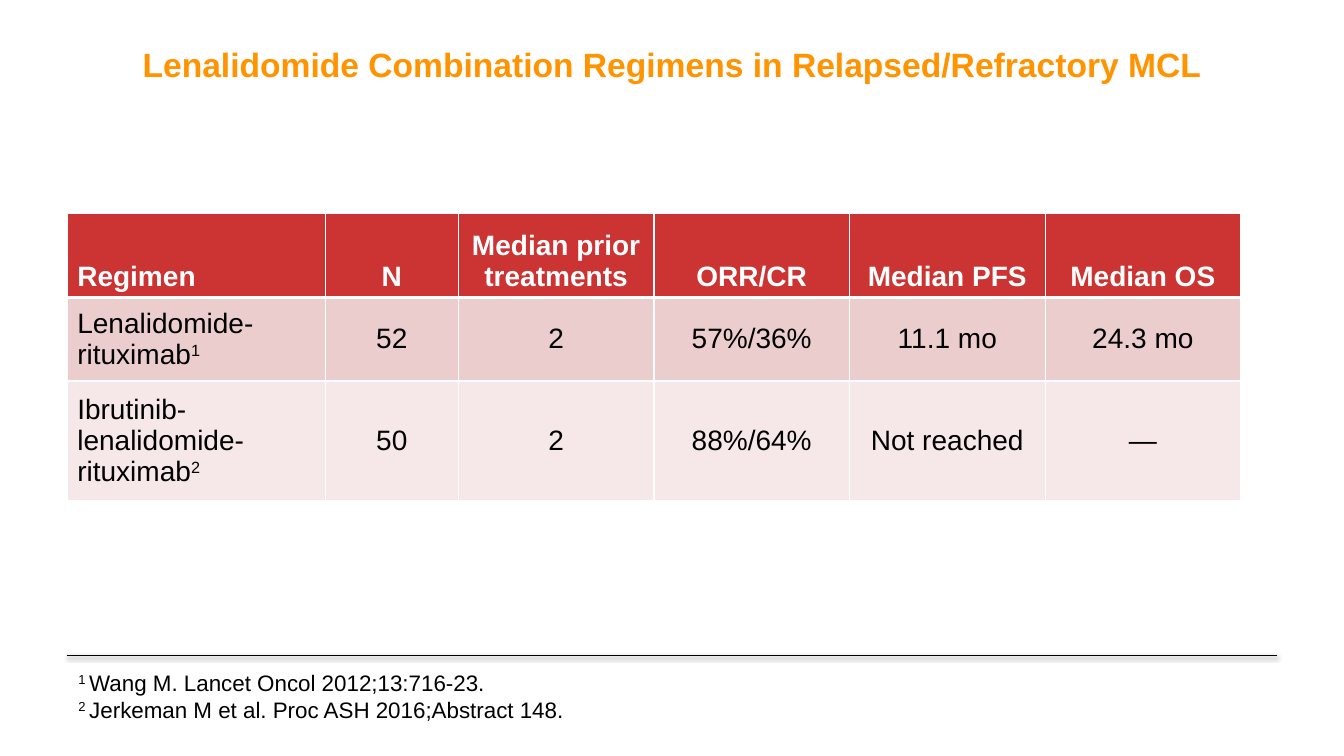
from lxml import etree
from pptx import Presentation
from pptx.dml.color import RGBColor
from pptx.enum.shapes import MSO_CONNECTOR
from pptx.enum.text import MSO_ANCHOR, MSO_AUTO_SIZE, PP_ALIGN
from pptx.oxml import parse_xml
from pptx.util import Inches, Pt

LEFT, CENTER = PP_ALIGN.LEFT, PP_ALIGN.CENTER
TOP, MIDDLE, BOTTOM = MSO_ANCHOR.TOP, MSO_ANCHOR.MIDDLE, MSO_ANCHOR.BOTTOM
STRAIGHT = MSO_CONNECTOR.STRAIGHT
NS = "http://schemas.openxmlformats.org/drawingml/2006/main"


def rgb(value):
    return RGBColor.from_string(value)


def write(paragraph, pieces, size, color, bold=False, align=LEFT):
    paragraph.alignment = align
    for text, raised in pieces:
        run = paragraph.add_run()
        run.text = text
        for key, value in {"name": "Arial", "size": Pt(size), "bold": bold}.items():
            setattr(run.font, key, value)
        run.font.color.rgb = rgb(color)
        if raised:
            run._r.get_or_add_rPr().set("baseline", "30000")


deck = Presentation()
deck.slide_width, deck.slide_height = Inches(13.33), Inches(7.5)
slide = deck.slides.add_slide(deck.slide_layouts[5])
margin = int(deck.slide_width * 0.05)
content_width = deck.slide_width - 2 * margin

rule_y = Inches(6.5)
rule = slide.shapes.add_connector(STRAIGHT, margin, rule_y, margin + content_width, rule_y)
rule.line.color.rgb = rgb("000000")
rule.line.width = Pt(0.5)
rule._element.spPr.append(parse_xml(
    f'<a:effectLst xmlns:a="{NS}"><a:outerShdw blurRad="{Pt(3.1)}" dist="{Pt(1.6)}" '
    'dir="5400000" rotWithShape="0"><a:srgbClr val="000000"><a:alpha val="38000"/>'
    '</a:srgbClr></a:outerShdw></a:effectLst>'))

heading = slide.shapes.title
place = {"left": margin, "top": Inches(0.44), "width": content_width, "height": Inches(0.81)}
for key, value in place.items():
    setattr(heading, key, value)
heading_frame = heading.text_frame
frame_format = {"margin_left": 0, "margin_right": 0, "margin_top": 0, "margin_bottom": 0,
                "vertical_anchor": TOP, "word_wrap": True, "auto_size": MSO_AUTO_SIZE.NONE}
for key, value in frame_format.items():
    setattr(heading_frame, key, value)
write(heading_frame.paragraphs[0],
      [("Lenalidomide Combination Regimens in Relapsed/Refractory MCL", False)],
      24, "FF9300", True, CENTER)

regimens = [
    ["Regimen", "N", "Median prior treatments", "ORR/CR", "Median PFS", "Median OS"],
    ["Lenalidomide-rituximab", "52", "2", "57%/36%", "11.1 mo", "24.3 mo"],
    ["Ibrutinib-lenalidomide-rituximab", "50", "2", "88%/64%", "Not reached", "—"],
]
column_widths = [2.56, 1.32] + [1.94] * 4
row_heights = [0.83, 0.83, 1.19]
row_fills = ["CC3333", "ECCDCD", "F6E8E8"]
table = slide.shapes.add_table(
    len(row_heights), len(column_widths), margin, Inches(2.12),
    Inches(sum(column_widths)), Inches(sum(row_heights))).table
for column, width in zip(table.columns, column_widths):
    column.width = Inches(width)
for row, height in zip(table.rows, row_heights):
    row.height = Inches(height)

for r, values in enumerate(regimens):
    header = r == 0
    for c, value in enumerate(values):
        cell = table.cell(r, c)
        cell.vertical_anchor = BOTTOM if header else MIDDLE
        pieces = [(value, False)]
        if c == 0 and not header:
            pieces.append((str(r), True))
        write(cell.text_frame.paragraphs[0], pieces, 20,
              "FFFFFF" if header else "000000", header, CENTER if c else LEFT)
        properties = cell._tc.get_or_add_tcPr()
        border_widths = {"lnL": 1, "lnR": 1, "lnT": 3 if r == 1 else 1, "lnB": 3 if header else 1}
        for side, points in border_widths.items():
            border = etree.SubElement(properties, f"{{{NS}}}{side}", w=str(Pt(points)))
            paint = etree.SubElement(border, f"{{{NS}}}solidFill")
            etree.SubElement(paint, f"{{{NS}}}srgbClr", val="FFFFFF")
        cell.fill.solid()
        cell.fill.fore_color.rgb = rgb(row_fills[r])

references = ["Wang M. Lancet Oncol 2012;13:716-23.", "Jerkeman M et al. Proc ASH 2016;Abstract 148."]
footnotes = slide.shapes.add_textbox(Inches(0.68), Inches(6.59), Inches(5.17), Inches(0.64)).text_frame
footnotes.word_wrap = False
footnotes.auto_size = MSO_AUTO_SIZE.SHAPE_TO_FIT_TEXT
for number, reference in enumerate(references, 1):
    line = footnotes.paragraphs[0] if number == 1 else footnotes.add_paragraph()
    write(line, [(f"{number} ", True), (reference, False)], 16, "000000")

deck.save("out.pptx")
